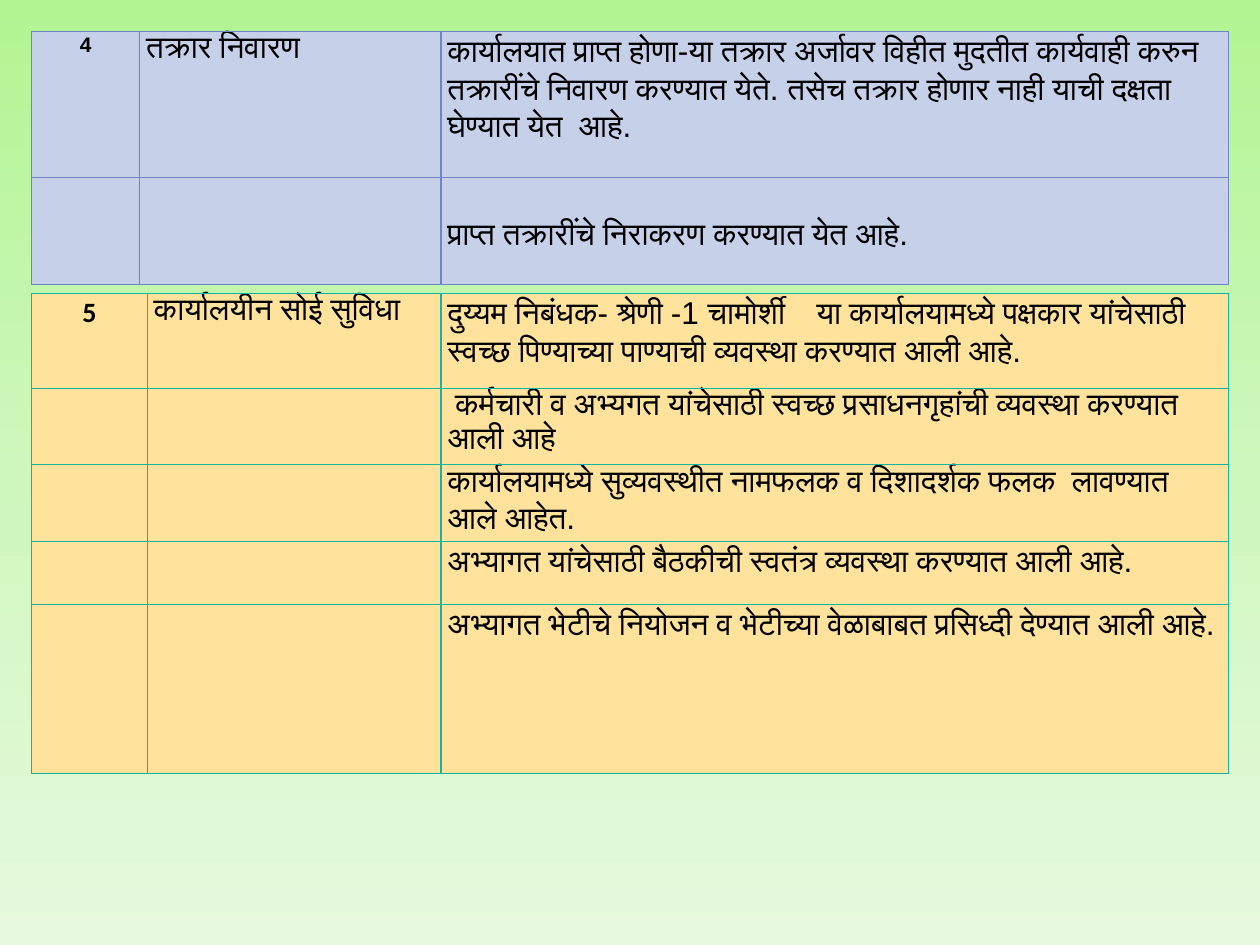
from copy import deepcopy

from pptx import Presentation
from pptx.dml.color import RGBColor
from pptx.enum.text import PP_ALIGN
from pptx.oxml import parse_xml
from pptx.oxml.ns import nsdecls, qn
from pptx.util import Inches, Pt

COLORS = {
    "sky_top": "B2F592",
    "sky_middle": "CEF7BD",
    "sky_bottom": "E7FADF",
    "complaints": "C7D0E9",
    "complaints_border": "6E86C6",
    "facilities": "FFE39D",
    "facilities_border": "16B39E",
    "text": "000000",
}

COMPLAINTS = [
    ("4", "तक्रार निवारण",
     "कार्यालयात प्राप्त होणा-या तक्रार अर्जावर विहीत मुदतीत कार्यवाही करुन "
     "तक्रारींचे निवारण करण्यात येते. तसेच तक्रार होणार नाही याची दक्षता "
     "घेण्यात येत  आहे."),
    ("", "", "प्राप्त तक्रारींचे निराकरण करण्यात येत आहे."),
]

FACILITIES = [
    ("5", "कार्यालयीन सोई सुविधा",
     "दुय्यम निबंधक- श्रेणी -1 चामोर्शी    या कार्यालयामध्ये पक्षकार यांचेसाठी "
     "स्वच्छ पिण्याच्या पाण्याची व्यवस्था करण्यात आली आहे."),
    ("", "", " कर्मचारी व अभ्यगत यांचेसाठी स्वच्छ प्रसाधनगृहांची व्यवस्था "
             "करण्यात आली आहे"),
    ("", "", "कार्यालयामध्ये सुव्यवस्थीत नामफलक व दिशादर्शक फलक  लावण्यात "
             "आले आहेत."),
    ("", "", "अभ्यागत यांचेसाठी बैठकीची स्वतंत्र व्यवस्था करण्यात आली आहे."),
    ("", "", "अभ्यागत भेटीचे नियोजन व भेटीच्या वेळाबाबत प्रसिध्दी देण्यात "
             "आली आहे."),
]


def color(name):
    return RGBColor.from_string(COLORS[name])


def paint_background(slide):
    fill = slide.background.fill
    fill.gradient()
    fill.gradient_angle = 270
    stop_list = slide.element.find(".//" + qn("a:gsLst"))
    stop_list.append(deepcopy(stop_list[0]))
    shades = ("sky_top", "sky_middle", "sky_bottom")
    for stop, shade, position in zip(fill.gradient_stops, shades, (0, 0.5, 1)):
        stop.color.rgb = color(shade)
        stop.position = position


def add_borders(cell, border):
    properties = cell._tc.get_or_add_tcPr()
    for index, side in enumerate(("lnL", "lnR", "lnT", "lnB")):
        properties.insert(index, parse_xml(
            f'<a:{side} {nsdecls("a")} w="{Pt(0.75)}"><a:solidFill>'
            f'<a:srgbClr val="{COLORS[border]}"/></a:solidFill></a:{side}>'))


def write_cell(cell, text, font_name, size, is_number):
    cell.margin_left = cell.margin_right = Inches(0.05)
    cell.margin_top = cell.margin_bottom = 0
    cell.text = text
    paragraph = cell.text_frame.paragraphs[0]
    paragraph.line_spacing = 1.07
    paragraph.alignment = PP_ALIGN.CENTER if is_number else PP_ALIGN.LEFT
    paragraph.font.name = font_name
    paragraph.font.size = Pt(size)
    paragraph.font.bold = is_number
    paragraph.font.color.rgb = color("text")


def add_section(slide, entries, top, widths, heights, theme, number_font, number_size):
    table = slide.shapes.add_table(
        len(entries), len(widths), Inches(0.25), Inches(top),
        Inches(sum(widths)), Inches(sum(heights))).table
    table.first_row = table.horz_banding = False
    for column, width in zip(table.columns, widths):
        column.width = Inches(width)
    for row, height, entry in zip(table.rows, heights, entries):
        row.height = Inches(height)
        for index, (cell, text) in enumerate(zip(row.cells, entry)):
            cell.fill.solid()
            cell.fill.fore_color.rgb = color(theme)
            add_borders(cell, theme + "_border")
            if text and index == 0:
                write_cell(cell, text, number_font, number_size, True)
            elif text:
                write_cell(cell, text, "Arial", 18, False)
    return table


def main():
    deck = Presentation()
    deck.slide_width, deck.slide_height = Inches(10), Inches(7.5)
    slide = deck.slides.add_slide(deck.slide_layouts[6])
    paint_background(slide)
    complaints = add_section(slide, COMPLAINTS, 0.25, (0.86, 2.39, 6.25),
                             (1.16, 0.85), "complaints", "Arial", 12)
    complaints.cell(1, 2).margin_top = Inches(0.29)
    add_section(slide, FACILITIES, 2.33, (0.92, 2.33, 6.25),
                (0.75, 0.61, 0.61, 0.5, 1.34), "facilities", "Calibri", 16)
    deck.save("out.pptx")


if __name__ == "__main__":
    main()
